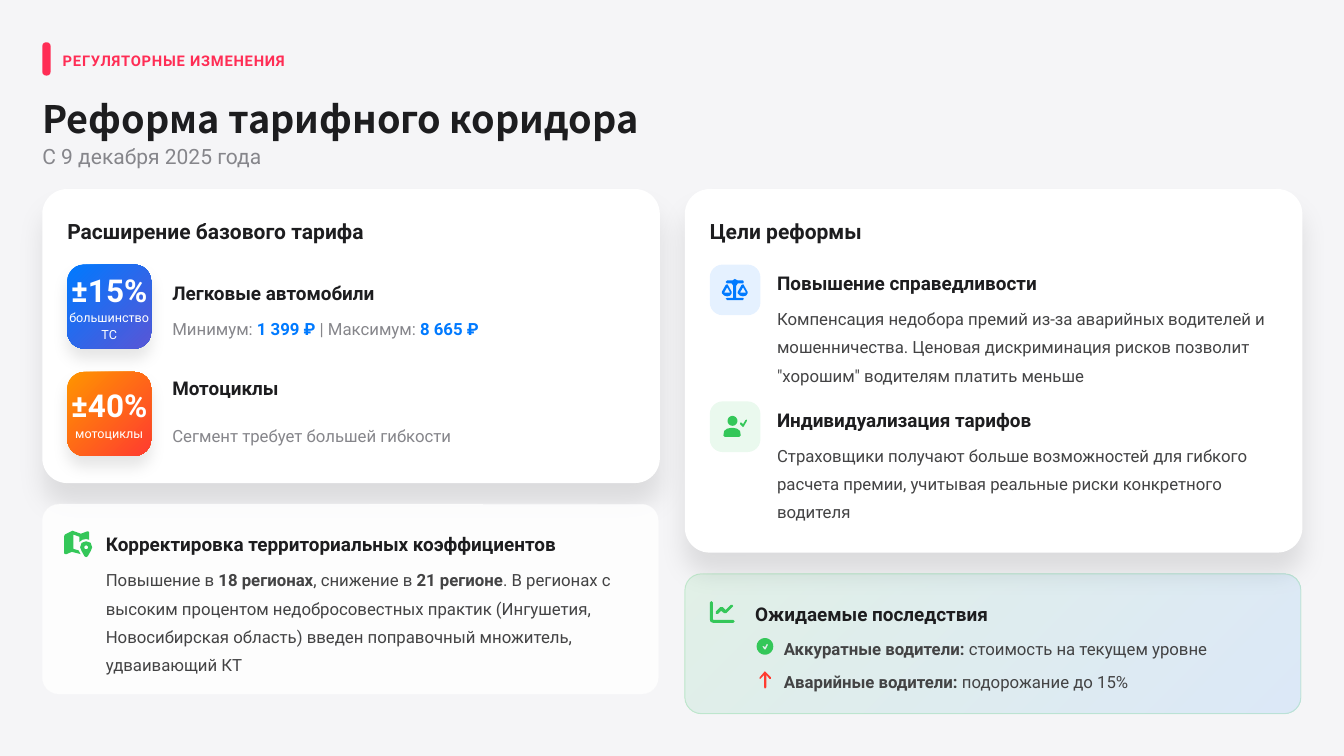
"""Build a slide on the reform of the insurance tariff corridor."""
from dataclasses import dataclass
from math import cos, pi, sin

from lxml.etree import SubElement
from pptx import Presentation
from pptx.dml.color import RGBColor
from pptx.enum.shapes import MSO_SHAPE
from pptx.enum.text import MSO_ANCHOR, PP_ALIGN
from pptx.oxml.ns import qn
from pptx.util import Inches, Pt


@dataclass(frozen=True)
class Theme:
    background: str = "F5F5F7"
    white: str = "FFFFFF"
    ink: str = "1D1D1F"
    body: str = "434344"
    muted: str = "86868B"
    pink: str = "FF2D55"
    blue: str = "007AFF"
    indigo: str = "5856D6"
    orange: str = "FF9500"
    red: str = "FF3B30"
    green: str = "34C759"
    font: str = "Roboto"
    title_font: str = "Noto Sans CJK SC"
    title_size: int = 36
    value_size: int = 30
    heading_size: int = 20
    item_size: int = 18
    body_size: int = 16
    tag_size: int = 14
    label_size: int = 12


theme = Theme()
deck = Presentation()
deck.slide_width, deck.slide_height = Inches(17.78), Inches(10)
page = deck.slides.add_slide(deck.slide_layouts[6])
page.background.fill.solid()
page.background.fill.fore_color.rgb = RGBColor.from_string(theme.background)


def add_text(left, top, width, height, content, size, color, spacing=1.3, bold=False,
             font=theme.font, align=PP_ALIGN.LEFT):
    """Write one paragraph; content is a string or a list of (text, bold, color)."""
    box = page.shapes.add_textbox(Inches(left), Inches(top), Inches(width), Inches(height))
    frame = box.text_frame
    frame.word_wrap = True
    frame.vertical_anchor = MSO_ANCHOR.MIDDLE
    frame.margin_left = frame.margin_right = frame.margin_top = frame.margin_bottom = 0
    para = frame.paragraphs[0]
    para.alignment = align
    para.line_spacing = spacing
    spans = [(content, bold, color)] if isinstance(content, str) else content
    for text, heavy, tint in spans:
        span = para.add_run()
        span.text = text
        span.font.name = font
        span.font.size = Pt(size)
        span.font.bold = heavy
        span.font.color.rgb = RGBColor.from_string(tint)
    return para


def add_panel(left, top, width, height, radius, colors, opacity=100, shadow=None, line=None):
    """Draw a rounded panel; shadow is (blur, distance), line is (color, opacity)."""
    panel = page.shapes.add_shape(MSO_SHAPE.ROUNDED_RECTANGLE, Inches(left), Inches(top),
                                  Inches(width), Inches(height))
    panel.adjustments[0] = radius / min(width, height)
    panel.shadow.inherit = False
    if len(colors) == 2:
        panel.fill.gradient()
        panel.fill.gradient_angle = 315
        for stop, color in zip(panel.fill.gradient_stops, colors):
            stop.color.rgb = RGBColor.from_string(color)
    else:
        panel.fill.solid()
        panel.fill.fore_color.rgb = RGBColor.from_string(colors[0])
    properties = panel._element.spPr
    if opacity < 100:
        for color in properties.iter(qn("a:srgbClr")):
            SubElement(color, qn("a:alpha"), val=str(opacity * 1000))
    if line:
        panel.line.color.rgb = RGBColor.from_string(line[0])
        panel.line.width = Pt(0.96)
        stroke = properties.find(qn("a:ln")).find(".//" + qn("a:srgbClr"))
        SubElement(stroke, qn("a:alpha"), val=str(line[1] * 1000))
    else:
        panel.line.fill.background()
    if shadow:
        outer = SubElement(properties.find(qn("a:effectLst")), qn("a:outerShdw"),
                           blurRad=str(Pt(shadow[0])), dist=str(Pt(shadow[1])),
                           dir="5400000", algn="ctr", rotWithShape="0")
        shade = SubElement(outer, qn("a:srgbClr"), val="000000")
        SubElement(shade, qn("a:alpha"), val="10000")


add_panel(0.56, 0.56, 0.11, 0.44, 0.05, [theme.pink])
tag = add_text(0.83, 0.64, 3.08, 0.28, "РЕГУЛЯТОРНЫЕ ИЗМЕНЕНИЯ", theme.tag_size, theme.pink, 1.2, True)
tag.runs[0].font._element.set("spc", "70")
add_text(0.56, 1.32, 16.92, 0.56, "Реформа тарифного коридора", theme.title_size, theme.ink,
         0.9, True, theme.title_font)
add_text(0.56, 1.83, 16.81, 0.39, "С 9 декабря 2025 года", theme.heading_size, theme.muted, 1.2)

for left, height, heading in [(0.56, 3.89, "Расширение базового тарифа"), (9.06, 4.81, "Цели реформы")]:
    add_panel(left, 2.5, 8.17, height, 0.33, [theme.white], shadow=(25, 20))
    add_text(left + 0.33, 2.83, 7.64, 0.39, heading, theme.heading_size, theme.ink, 1.2, True)

price_range = [("Минимум: ", False, theme.muted), ("1 399 ₽", True, theme.blue),
               (" | Максимум: ", False, theme.muted), ("8 665 ₽", True, theme.blue)]
tariffs = [
    (3.5, [theme.blue, theme.indigo], 3.58, "±15%", 0.44, "большинство ТС",
     3.64, "Легковые автомобили", 0.33, price_range),
    (4.92, [theme.orange, theme.red], 5.11, "±40%", 0.22, "мотоциклы",
     4.89, "Мотоциклы", 0.67, "Сегмент требует большей гибкости"),
]
for top, colors, value_top, value, label_height, label, name_top, name, detail_height, detail in tariffs:
    add_panel(0.89, top, 1.11, 1.11, 0.22, colors, shadow=(15, 10))
    add_text(0.79, value_top, 1.31, 0.5, value, theme.value_size, theme.white, 1.0, True,
             align=PP_ALIGN.CENTER)
    add_text(0.85, value_top + 0.5, 1.19, label_height, label, theme.label_size, theme.white, 1.1,
             align=PP_ALIGN.CENTER)
    add_text(2.28, name_top, 6.24, 0.39, name, theme.item_size, theme.ink, bold=True)
    add_text(2.28, name_top + 0.5, 6.22, detail_height, detail, theme.body_size, theme.muted)

add_panel(0.56, 6.67, 8.15, 2.51, 0.22, [theme.white], 85, line=(theme.white, 30))
add_text(1.4, 6.96, 7.15, 0.39, "Корректировка территориальных коэффициентов", theme.item_size,
         theme.ink, bold=True)
regions = [("Повышение в ", False), ("18 регионах", True), (", снижение в ", False), ("21 регионе", True),
           (". В регионах с высоким процентом недобросовестных практик (Ингушетия, Новосибирская область) "
            "введен поправочный множитель, удваивающий КТ", False)]
add_text(1.4, 7.46, 7.14, 1.44, [(text, heavy, theme.body) for text, heavy in regions],
         theme.body_size, theme.body, 1.4)

goals = [
    (3.5, theme.blue, "Повышение справедливости",
     "Компенсация недобора премий из-за аварийных водителей и мошенничества. Ценовая дискриминация "
     "рисков позволит \"хорошим\" водителям платить меньше"),
    (5.31, theme.green, "Индивидуализация тарифов",
     "Страховщики получают больше возможностей для гибкого расчета премии, учитывая реальные риски "
     "конкретного водителя"),
]
for top, color, name, detail in goals:
    add_panel(9.39, top, 0.67, 0.67, 0.17, [color], 10)
    add_text(10.28, top, 6.74, 0.39, name, theme.item_size, theme.ink, bold=True)
    add_text(10.28, top + 0.5, 6.72, 1.08, detail, theme.body_size, theme.body, 1.4)

add_panel(9.06, 7.59, 8.15, 1.85, 0.22, [theme.green, theme.blue], 10, line=(theme.green, 20))
add_text(9.99, 7.88, 6.22, 0.39, "Ожидаемые последствия", theme.item_size, theme.ink, bold=True)
outcomes = [(8.38, "Аккуратные водители:", " стоимость на текущем уровне"),
            (8.82, "Аварийные водители:", " подорожание до 15%")]
for top, drivers, effect in outcomes:
    add_text(10.37, top, 5.82, 0.33, [(drivers, True, theme.body), (effect, False, theme.body)],
             theme.body_size, theme.body)

circle = [(cos(step * pi / 16), sin(step * pi / 16)) for step in range(32)]
map_sheet = [(33, 2), (32, 1), (30, 1), (22, 4), (11, 0), (9, 1), (1, 5), (0, 7), (0, 30), (1, 31), (3, 31),
             (10, 28), (22, 31), (21, 30), (19, 26), (12, 24), (12, 5), (20, 8), (20, 15), (24, 12),
             (29, 11), (33, 12)]
map_pin = [(29, 14), (23, 16), (21, 22), (23, 27), (27, 34), (29, 35), (31, 34), (35, 27), (37, 22), (35, 16)]
pin_hole = [(29 + 2.5 * x, 22 + 2.5 * y) for x, y in circle]
scale_stand = [(21, 2), (28, 2), (29, 4), (28, 6), (21, 6), (19, 9), (19, 25), (28, 25), (29, 26), (28, 28),
               (7, 28), (5, 26), (7, 25), (15, 25), (15, 9), (13, 6), (7, 6), (5, 4), (7, 2), (14, 2), (17, 0)]
right_pan = [(28, 7), (29, 8), (34, 17), (34, 19), (32, 22), (28, 23), (24, 22), (21, 19), (21, 17), (26, 8)]
right_gap = [(24, 18), (32, 18), (28, 11)]
left_pan, left_gap = [[(x - 21, y) for x, y in part] for part in (right_pan, right_gap)]
person_head = [(12 + 6.5 * x, 6.7 + 6.5 * y) for x, y in circle]
person_body = [(0, 26), (1, 20), (5, 17), (10, 16), (13, 16), (18, 17), (22, 20), (23, 26), (21, 28), (2, 28)]
person_tick = [(31, 7), (27, 14), (26, 15), (25, 14), (22, 11), (22, 9), (24, 9), (26, 11), (29, 6), (31, 5)]
chart_axes = [(4, 2), (2, 0), (0, 2), (0, 24), (1, 27.5), (5, 29), (31, 29), (33, 27), (31, 25), (5, 25), (4, 24)]
chart_line = [(30, 8), (31, 7), (30, 5), (28, 5), (21, 12), (17, 8), (14, 8), (8, 14), (8, 17), (11, 17),
              (15, 13), (19, 16), (22, 16)]
disc = [(11 + 11 * x, 11 + 11 * y) for x, y in circle]
disc_tick = [(15, 9), (12, 15), (10, 15), (8, 12), (8, 10), (10, 11), (11, 12), (13, 8), (15, 8)]
up_arrow = [(9, 1), (8, 0), (7, 1), (1, 8), (1, 10), (2, 10), (7, 5), (7, 21), (8, 23), (10, 21), (10, 5),
            (14, 10), (16, 10), (16, 8)]
icons = [
    (0.85, 7.02, theme.green, [map_sheet, map_pin, pin_hole]),
    (9.55, 3.69, theme.blue, [scale_stand, right_pan, right_gap, left_pan, left_gap]),
    (9.57, 5.5, theme.green, [person_head, person_body, person_tick]),
    (9.39, 7.95, theme.green, [chart_axes, chart_line]),
    (10.01, 8.44, theme.green, [disc, disc_tick]),
    (10.04, 8.88, theme.red, [up_arrow]),
]
for left, top, color, outlines in icons:
    builder = page.shapes.build_freeform(scale=Inches(1) / 1000)
    for outline in outlines:
        points = [(round(10 * x), round(10 * y)) for x, y in outline]
        builder.move_to(*points[0])
        builder.add_line_segments(points[1:], close=True)
    icon = builder.convert_to_shape(Inches(left), Inches(top))
    icon.shadow.inherit = False
    icon.fill.solid()
    icon.fill.fore_color.rgb = RGBColor.from_string(color)
    icon.line.fill.background()

deck.save("out.pptx")
